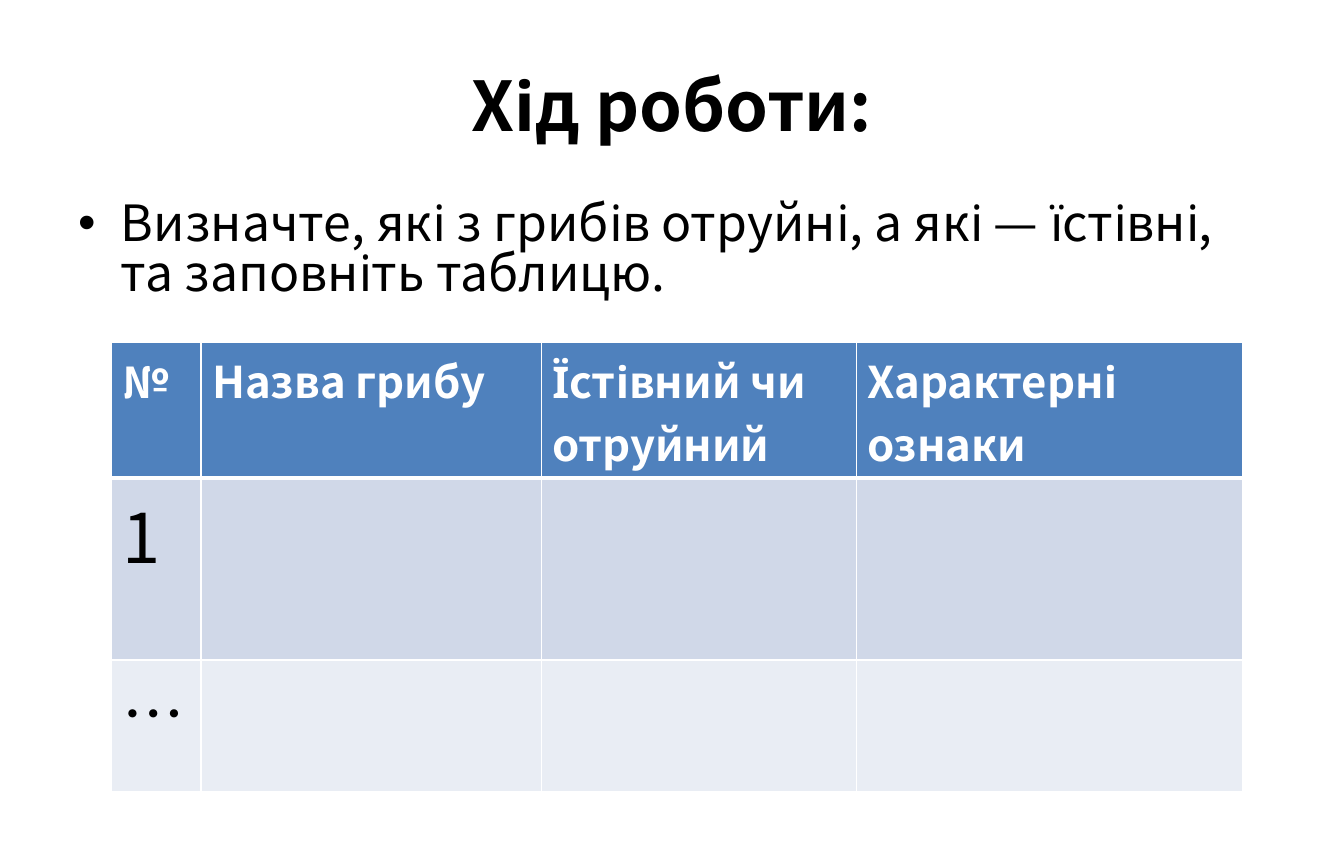
from pptx import Presentation
from pptx.util import Inches, Pt
from pptx.dml.color import RGBColor
from pptx.enum.text import PP_ALIGN, MSO_ANCHOR
from pptx.oxml import parse_xml
from pptx.oxml.ns import nsdecls

CENTER, MIDDLE = PP_ALIGN.CENTER, MSO_ANCHOR.MIDDLE
THEME = {
    "font": "Noto Sans CJK KR",
    "ink": "000000", "white": "FFFFFF",
    "fills": ["4F81BD", "D0D8E8", "E9EDF4"],
    "title": 44, "body": 32, "rows": [28, 44, 40],
}

deck = Presentation()
deck.slide_width, deck.slide_height = Inches(11.97), Inches(7.5)
slide = deck.slides.add_slide(deck.slide_layouts[6])
edge = deck.slide_width * 0.05
span = deck.slide_width * 0.9


def style(para, size, color, bold=False):
    font = para.font
    font.name, font.size, font.bold = THEME["font"], Pt(size), bold
    font.color.rgb = RGBColor.from_string(color)


def add_text(top, height, text, size, bold=False):
    box = slide.shapes.add_textbox(int(edge), Inches(top), int(span), Inches(height))
    frame = box.text_frame
    frame.word_wrap = True
    para = frame.paragraphs[0]
    para.text = text
    style(para, size, THEME["ink"], bold)
    return frame, para


# Title
frame, para = add_text(0.3, 1.25, "Хід роботи:", THEME["title"], True)
frame.vertical_anchor = MIDDLE
para.alignment = CENTER

# Task with a hanging bullet
frame, para = add_text(1.75, 1.25,
                       "Визначте, які з грибів отруйні, а які — їстівні, та заповніть таблицю.",
                       THEME["body"])
para.line_spacing = 0.83
props = para._p.get_or_add_pPr()
props.set("marL", str(Inches(0.38)))
props.set("indent", str(-Inches(0.38)))
for mark in ('<a:buFont {} typeface="Arial"/>', '<a:buChar {} char="•"/>'):
    props.append(parse_xml(mark.format(nsdecls("a"))))

# Table
cols = [0.8, 3.03, 2.81, 3.44]
rows = [1.21, 1.62, 1.17]
words = [["№", "Назва грибу", "Їстівний чи отруйний", "Характерні ознаки"],
         ["1"], ["…"]]
grid = slide.shapes.add_table(len(rows), len(cols), Inches(0.99), Inches(3.05),
                              Inches(sum(cols)), Inches(sum(rows))).table
for col, width in zip(grid.columns, cols):
    col.width = Inches(width)
for r, height in enumerate(rows):
    grid.rows[r].height = Inches(height)
    head = r == 0
    for c in range(len(cols)):
        cell = grid.cell(r, c)
        if c < len(words[r]):
            cell.text = words[r][c]
            style(cell.text_frame.paragraphs[0], THEME["rows"][r],
                  THEME["white" if head else "ink"], head)
        cell.fill.solid()
        cell.fill.fore_color.rgb = RGBColor.from_string(THEME["fills"][r])
        # White rules, thicker around the header's lower edge
        lines = {"lnL": 1, "lnR": 1, "lnT": 3 if r == 1 else 1, "lnB": 3 if head else 1}
        for i, (side, width) in enumerate(lines.items()):
            cell._tc.get_or_add_tcPr().insert(i, parse_xml(
                f'<a:{side} {nsdecls("a")} w="{Pt(width)}"><a:solidFill>'
                f'<a:srgbClr val="{THEME["white"]}"/></a:solidFill></a:{side}>'))

deck.save("out.pptx")
